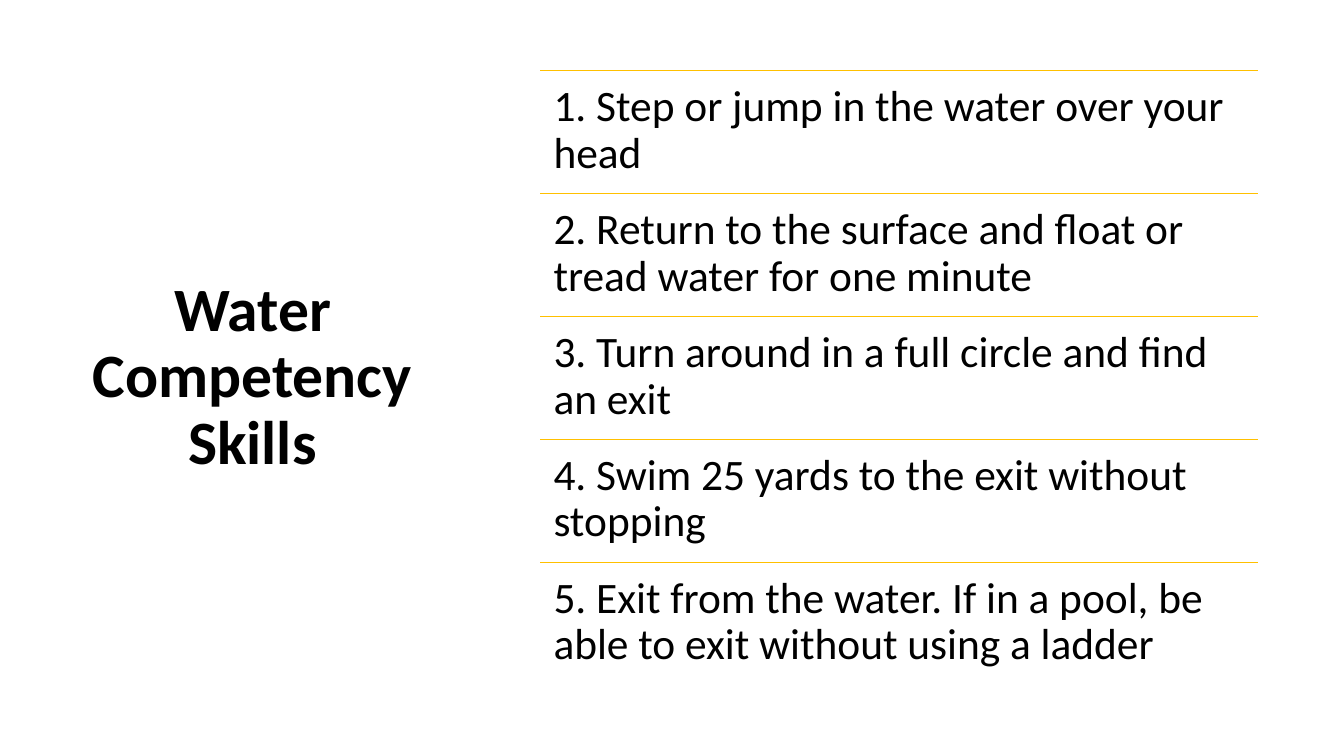
from lxml.etree import SubElement
from pptx import Presentation
from pptx.dml.color import RGBColor
from pptx.enum.shapes import MSO_CONNECTOR
from pptx.enum.text import MSO_ANCHOR, PP_ALIGN
from pptx.oxml.ns import qn
from pptx.util import Inches, Pt

SLIDE_WIDTH, SLIDE_HEIGHT = 13.33, 7.5
MARGIN_TOP = 0.7
CONTENT_HEIGHT = SLIDE_HEIGHT - 2 * MARGIN_TOP
TITLE_BOX = (0.7, MARGIN_TOP, 3.61, CONTENT_HEIGHT)
SKILLS_BOX = (5.36, MARGIN_TOP, 7.12, CONTENT_HEIGHT)
FONT = "Calibri"
BLACK, GOLD = "000000", "FFC000"
SKILLS = [
    "Step or jump in the water over your head",
    "Return to the surface and float or tread water for one minute",
    "Turn around in a full circle and find an exit",
    "Swim 25 yards to the exit without stopping",
    "Exit from the water. If in a pool, be able to exit without using a ladder",
]


def color(hex_value):
    return RGBColor.from_string(hex_value)


def add_text(slide, box, text, size, bold=False, align=PP_ALIGN.LEFT,
             anchor=MSO_ANCHOR.TOP, inset_x=0.1, inset_y=0.05):
    shape = slide.shapes.add_textbox(*map(Inches, box))
    frame = shape.text_frame
    frame.word_wrap = True
    frame.vertical_anchor = anchor
    frame.margin_left = frame.margin_right = Inches(inset_x)
    frame.margin_top = frame.margin_bottom = Inches(inset_y)
    paragraph = frame.paragraphs[0]
    paragraph.alignment = align
    paragraph.line_spacing = 0.9
    run = paragraph.add_run()
    run.text = text
    run.font.name = FONT
    run.font.size = Pt(size)
    run.font.bold = bold
    run.font.color.rgb = color(BLACK)


def add_rule(slide, left, top, width):
    rule = slide.shapes.add_connector(
        MSO_CONNECTOR.STRAIGHT, Inches(left), Inches(top),
        Inches(left + width), Inches(top))
    rule.line.color.rgb = color(GOLD)
    rule.line.width = Pt(1)
    SubElement(rule._element.spPr, qn("a:effectLst"))


def add_title(slide, box):
    add_text(slide, box, "Water Competency Skills", 44, bold=True,
             align=PP_ALIGN.CENTER, anchor=MSO_ANCHOR.MIDDLE)


def add_skills(slide, box):
    left, top, width, height = box
    row_height = height / len(SKILLS)
    for index, skill in enumerate(SKILLS):
        row_top = top + index * row_height
        add_rule(slide, left, row_top, width)
        add_text(slide, (left, row_top, width, row_height),
                 f"{index + 1}. {skill}", 31, inset_x=0.13, inset_y=0.13)


def main():
    presentation = Presentation()
    presentation.slide_width = Inches(SLIDE_WIDTH)
    presentation.slide_height = Inches(SLIDE_HEIGHT)
    slide = presentation.slides.add_slide(presentation.slide_layouts[6])
    add_title(slide, TITLE_BOX)
    add_skills(slide, SKILLS_BOX)
    presentation.save("out.pptx")


if __name__ == "__main__":
    main()
